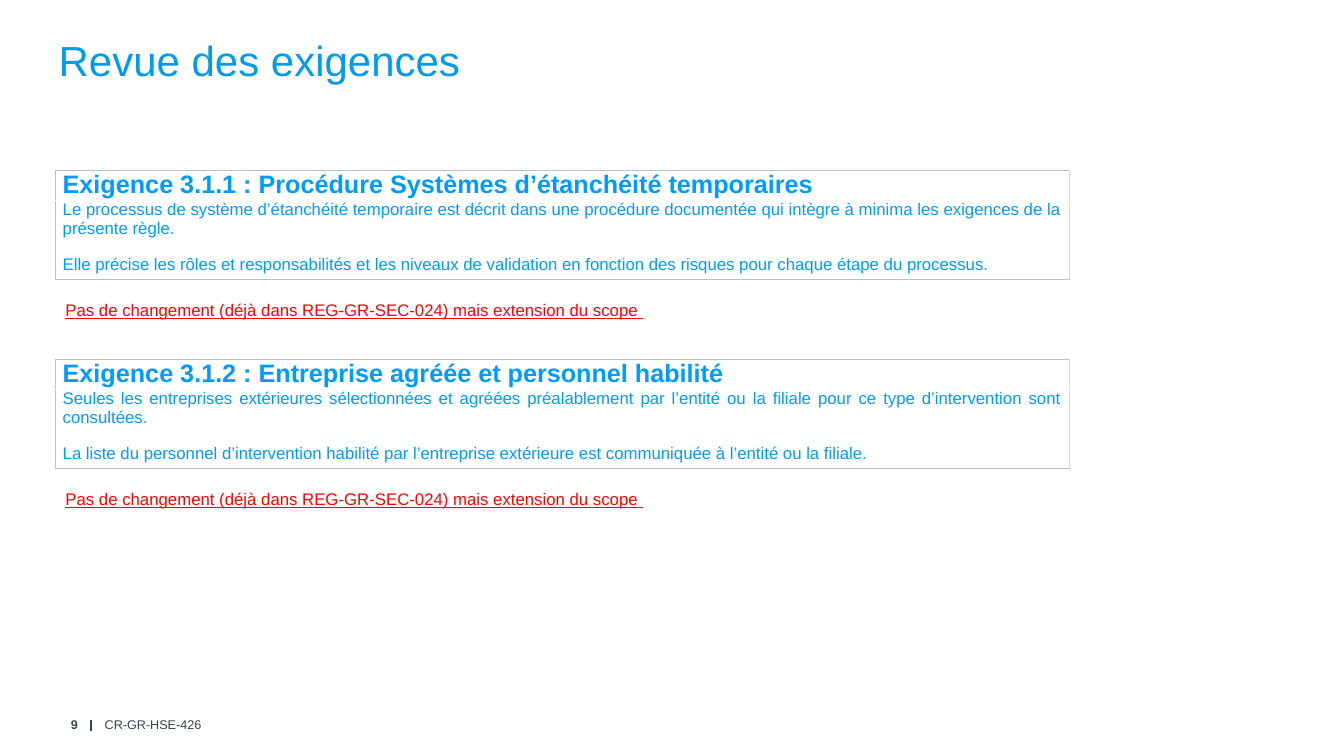
from dataclasses import dataclass

from lxml.etree import SubElement
from pptx import Presentation
from pptx.dml.color import RGBColor
from pptx.enum.shapes import MSO_CONNECTOR
from pptx.enum.text import MSO_ANCHOR, PP_ALIGN
from pptx.oxml import parse_xml
from pptx.oxml.ns import nsdecls, qn
from pptx.slide import Slide
from pptx.table import _Cell
from pptx.text.text import TextFrame, _Paragraph
from pptx.util import Cm, Length, Pt

TITLE_BLUE = RGBColor(0x00, 0x9C, 0xEA)
REQUIREMENT_BLUE = RGBColor(0x00, 0x9B, 0xFF)
RED = RGBColor(0xFF, 0x00, 0x00)
SLATE = RGBColor(0x37, 0x46, 0x49)
GREY = RGBColor(0xBF, 0xBF, 0xBF)
LIGHT_GREY = RGBColor(0xD9, 0xD9, 0xD9)

LEFT = Cm(1.4)
WIDTH = Cm(25.55)
FIRST_TOP = Cm(4.29)
PITCH = Cm(4.76)
HEADING_HEIGHT = Cm(0.73)
BODY_HEIGHT = Cm(1.99)
REMARK_OFFSET = Cm(3.15)
FOOTER_TOP = Cm(17.91)
FOOTER_HEIGHT = Cm(0.71)
INSET = Cm(0.18)
BORDER_COLORS = {"L": GREY, "R": LIGHT_GREY, "T": GREY, "B": GREY}


@dataclass(frozen=True)
class Requirement:
    heading: str
    details: tuple[str, ...]
    remark: str


REQUIREMENTS = (
    Requirement(
        "Exigence 3.1.1 : Procédure Systèmes d’étanchéité temporaires",
        (
            "Le processus de système d’étanchéité temporaire est décrit dans une procédure "
            "documentée qui intègre à minima les exigences de la présente règle.",
            "Elle précise les rôles et responsabilités et les niveaux de validation en "
            "fonction des risques pour chaque étape du processus.",
        ),
        "Pas de changement (déjà dans REG-GR-SEC-024) mais extension du scope ",
    ),
    Requirement(
        "Exigence 3.1.2 : Entreprise agréée et personnel habilité",
        (
            "Seules les entreprises extérieures sélectionnées et agréées préalablement par "
            "l’entité ou la filiale pour ce type d’intervention sont consultées.",
            "La liste du personnel d’intervention habilité par l’entreprise extérieure est "
            "communiquée à l’entité ou la filiale.",
        ),
        "Pas de changement (déjà dans REG-GR-SEC-024) mais extension du scope ",
    ),
)


def set_font(paragraph: _Paragraph, size: int, color: RGBColor, bold: bool = False) -> None:
    font = paragraph.font
    font.name = "Arial"
    font.size = Pt(size)
    font.bold = bold
    font.color.rgb = color


def add_text(slide: Slide, text: str, left: Length, top: Length, width: Length,
             height: Length, size: int, color: RGBColor, bold: bool = False) -> TextFrame:
    frame = slide.shapes.add_textbox(left, top, width, height).text_frame
    frame.word_wrap = True
    frame.text = text
    set_font(frame.paragraphs[0], size, color, bold)
    return frame


def set_borders(cell: _Cell, sides: str) -> None:
    """Draw the given sides (letters among L, R, T, B, in that order)."""
    properties = cell._tc.get_or_add_tcPr()
    for index, side in enumerate(sides):
        border = parse_xml(
            f'<a:ln{side} {nsdecls("a")} w="{Pt(1)}"><a:solidFill>'
            f'<a:srgbClr val="{BORDER_COLORS[side]}"/></a:solidFill></a:ln{side}>'
        )
        properties.insert(index, border)


def fill_cell(cell: _Cell, texts: tuple[str, ...], size: int, bold: bool, sides: str) -> None:
    cell.fill.background()
    cell.margin_left = cell.margin_right = INSET
    cell.margin_top = cell.margin_bottom = 0
    cell.text = "\n".join(texts)
    for index, paragraph in enumerate(cell.text_frame.paragraphs):
        paragraph.alignment = PP_ALIGN.JUSTIFY
        if index:
            paragraph.space_before = Pt(12)
        set_font(paragraph, size, REQUIREMENT_BLUE, bold)
    set_borders(cell, sides)


def add_requirement(slide: Slide, requirement: Requirement, top: Length) -> None:
    table = slide.shapes.add_table(
        2, 1, LEFT, top, WIDTH, HEADING_HEIGHT + BODY_HEIGHT).table
    table.first_row = table.horz_banding = False
    table.rows[0].height = HEADING_HEIGHT
    table.rows[1].height = BODY_HEIGHT
    fill_cell(table.cell(0, 0), (requirement.heading,), 18, True, "LRT")
    fill_cell(table.cell(1, 0), requirement.details, 12, False, "LRB")
    remark = add_text(slide, requirement.remark, LEFT, top + REMARK_OFFSET,
                      WIDTH, Cm(1.4), 12, RED)
    remark.paragraphs[0].font.underline = True


def add_footer(slide: Slide) -> None:
    separator = slide.shapes.add_connector(
        MSO_CONNECTOR.STRAIGHT, Cm(2.29), Cm(18.14), Cm(2.29), Cm(18.42))
    separator.line.color.rgb = SLATE
    separator.line.width = Pt(1)
    SubElement(separator._element.spPr, qn("a:effectLst"))
    reference = add_text(slide, "CR-GR-HSE-426", Cm(2.39), FOOTER_TOP, Cm(10),
                         FOOTER_HEIGHT, 9, SLATE)
    page_number = add_text(slide, "9", Cm(0.61), FOOTER_TOP, Cm(1.6),
                           FOOTER_HEIGHT, 9, SLATE, bold=True)
    page_number.paragraphs[0].alignment = PP_ALIGN.RIGHT
    for frame in (reference, page_number):
        frame.vertical_anchor = MSO_ANCHOR.MIDDLE


def main() -> None:
    presentation = Presentation()
    presentation.slide_width = Cm(33.87)
    presentation.slide_height = Cm(19.05)
    slide = presentation.slides.add_slide(presentation.slide_layouts[6])

    title = add_text(slide, "Revue des exigences", Cm(1.3), Cm(0.69), Cm(27), Cm(2.79),
                     30, TITLE_BLUE)
    title.margin_left = title.margin_top = INSET
    for index, requirement in enumerate(REQUIREMENTS):
        add_requirement(slide, requirement, FIRST_TOP + index * PITCH)
    add_footer(slide)
    presentation.save("out.pptx")


if __name__ == "__main__":
    main()
